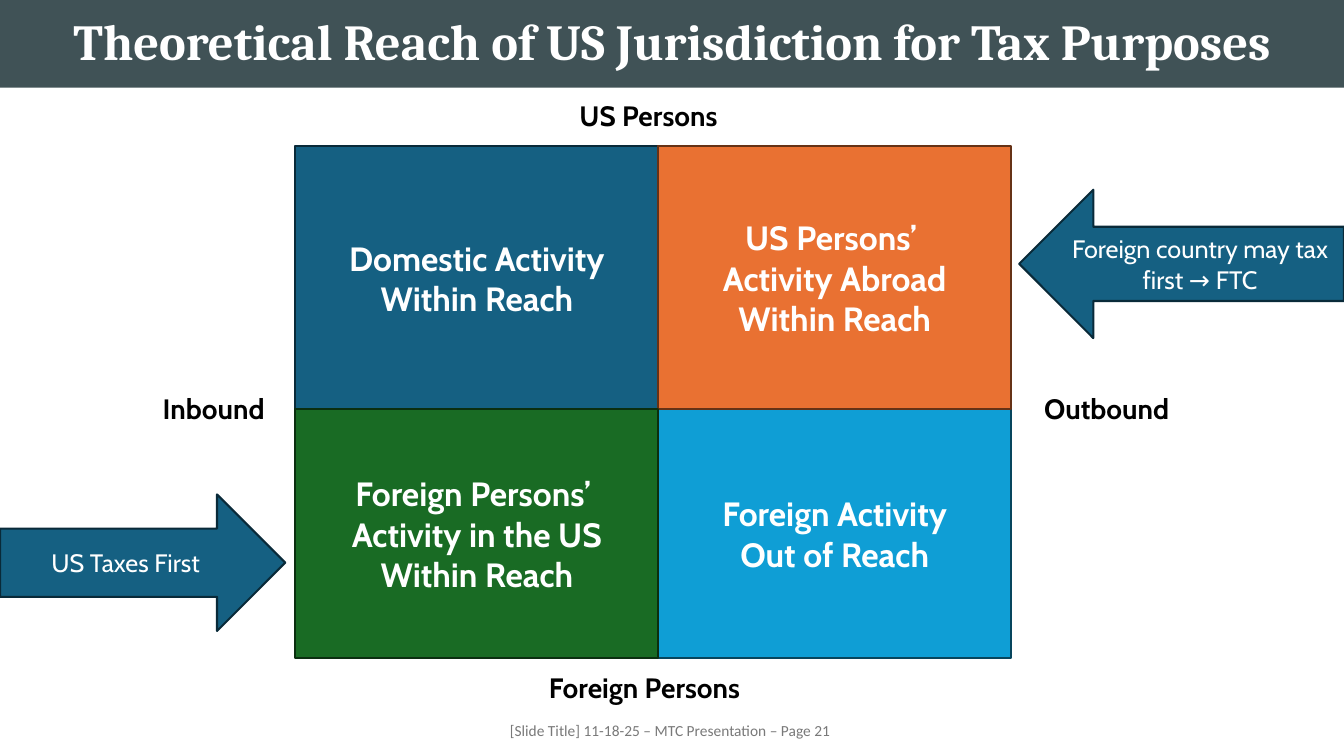
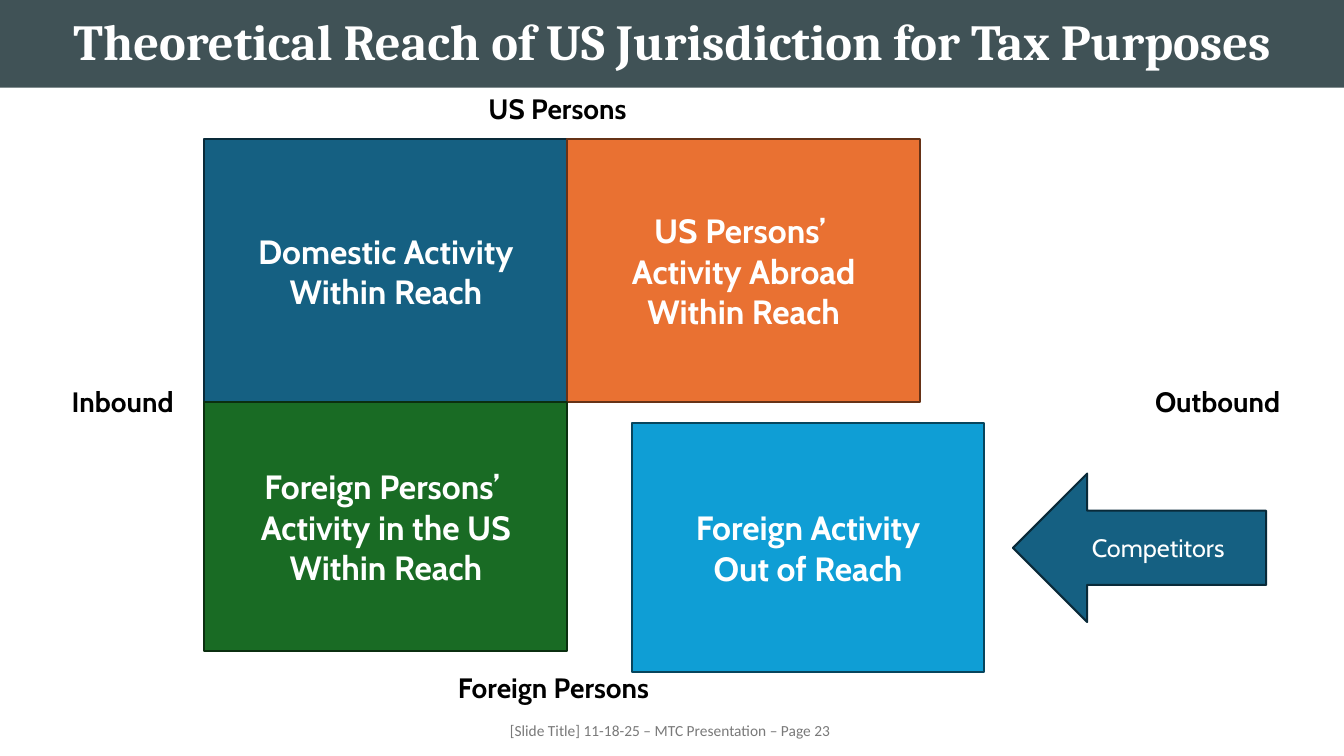
import pptx
import pptx.util
import pptx.dml.color
import pptx.enum.shapes
import pptx.enum.text

Pt = pptx.util.Pt
RGBColor = pptx.dml.color.RGBColor
SHAPE = pptx.enum.shapes.MSO_SHAPE
ALIGN = pptx.enum.text.PP_ALIGN
ANCHOR = pptx.enum.text.MSO_ANCHOR

# Shared colours and fonts
WHITE = RGBColor(0xFF, 0xFF, 0xFF)
BLACK = RGBColor(0x00, 0x00, 0x00)
SLATE = RGBColor(0x40, 0x52, 0x56)
GREY = RGBColor(0x79, 0x79, 0x79)
BLUE = RGBColor(0x15, 0x60, 0x82)
BLUE_EDGE = RGBColor(0x09, 0x2A, 0x39)
ORANGE = RGBColor(0xE9, 0x71, 0x32)
ORANGE_EDGE = RGBColor(0x66, 0x32, 0x16)
GREEN = RGBColor(0x19, 0x6B, 0x24)
GREEN_EDGE = RGBColor(0x0B, 0x2F, 0x10)
SKY = RGBColor(0x0F, 0x9E, 0xD5)
SKY_EDGE = RGBColor(0x07, 0x45, 0x5D)
BODY_FONT = "Cabin"

# Shared grid: sizes of its columns and rows, and (text, column, row, fill, edge)
SLIDE_WIDTH, SLIDE_HEIGHT = 960, 540
COLUMNS = (259.2, 252)
ROWS = (187.9, 177.8)
QUADRANTS = (
    ("Domestic Activity\nWithin Reach", 0, 0, BLUE, BLUE_EDGE),
    ("Foreign Activity\nOut of Reach", 1, 1, SKY, SKY_EDGE),
    ("US Persons’ \vActivity Abroad\nWithin Reach", 1, 0, ORANGE, ORANGE_EDGE),
    ("Foreign Persons’ \vActivity in the US\nWithin Reach", 0, 1, GREEN, GREEN_EDGE),
)

# What differs: page number, grid corner, shift of the out-of-reach quadrant,
# left of "Outbound", and the arrows
PAGES = (
    (21, 211, 104.4, (0, 0), 735.1, (
        ("US Taxes First", SHAPE.RIGHT_ARROW, 0, 353.2, 203.8, 97.5),
        ("Foreign country may tax first → FTC", SHAPE.LEFT_ARROW, 728, 135.5, 232, 106),
    )),
    (23, 146, 99.4, (46, 15), 814.3, (
        ("Competitors", SHAPE.LEFT_ARROW, 723.6, 338.3, 180.8, 106),
    )),
)


def write(box, text, size, color, bold=False, font=BODY_FONT,
          align=ALIGN.CENTER, anchor=ANCHOR.MIDDLE):
    frame = box.text_frame
    frame.text = text
    frame.word_wrap = True
    frame.auto_size = pptx.enum.text.MSO_AUTO_SIZE.NONE
    frame.vertical_anchor = anchor
    for para in frame.paragraphs:
        para.alignment = align
        for span in para.runs:
            span.font.name = font
            span.font.size = Pt(size)
            span.font.bold = bold
            span.font.color.rgb = color


def add_filled(page, kind, left, top, width, height, fill, edge):
    shape = page.shapes.add_shape(kind, Pt(left), Pt(top), Pt(width), Pt(height))
    shape.shadow.inherit = False
    shape.fill.solid()
    shape.fill.fore_color.rgb = fill
    shape.line.color.rgb = edge
    shape.line.width = Pt(1.5)
    return shape


deck = pptx.Presentation()
deck.slide_width, deck.slide_height = Pt(SLIDE_WIDTH), Pt(SLIDE_HEIGHT)

for number, grid_left, grid_top, shift, outbound_left, arrows in PAGES:
    page = deck.slides.add_slide(deck.slide_layouts[5])

    # Title band
    title = page.shapes.title
    title.left, title.top = Pt(0), Pt(0)
    title.width, title.height = Pt(SLIDE_WIDTH), Pt(62.6)
    title.fill.solid()
    title.fill.fore_color.rgb = SLATE
    write(title, "Theoretical Reach of US Jurisdiction for Tax Purposes",
          36, WHITE, True, "Cambria")
    title.text_frame.paragraphs[0].line_spacing = 0.9

    # Axis labels
    labels = (
        ("Inbound", grid_left - 109.5, grid_top + 171.4, 102.2, ALIGN.CENTER),
        ("Outbound", outbound_left, grid_top + 171.4, 110.9, ALIGN.CENTER),
        ("US Persons", grid_left + 195.8, grid_top - 37.4, 128.2, ALIGN.LEFT),
        ("Foreign Persons", grid_left + 174, 475.2, 173.5, ALIGN.LEFT),
    )
    for text, left, top, width, align in labels:
        label = page.shapes.add_textbox(Pt(left), Pt(top), Pt(width), Pt(31.7))
        write(label, text, 20, BLACK, True, align=align, anchor=ANCHOR.TOP)

    # Quadrants
    for text, column, row, fill, edge in QUADRANTS:
        shift_x, shift_y = shift if column and row else (0, 0)
        left = grid_left + sum(COLUMNS[:column]) + shift_x
        top = grid_top + sum(ROWS[:row]) + shift_y
        quadrant = add_filled(page, SHAPE.RECTANGLE, left, top,
                              COLUMNS[column], ROWS[row], fill, edge)
        write(quadrant, text, 24, WHITE, True)

    # Footer
    footer = page.shapes.add_textbox(Pt(318), Pt(507), Pt(324), Pt(28.8))
    write(footer, f"[Slide Title] 11-18-25 – MTC Presentation – Page {number} ",
          11, GREY, font="Calibri")

    # Arrows
    for text, kind, left, top, width, height in arrows:
        arrow = add_filled(page, kind, left, top, width, height, BLUE, BLUE_EDGE)
        write(arrow, text, 18, WHITE)

deck.save("out.pptx")
